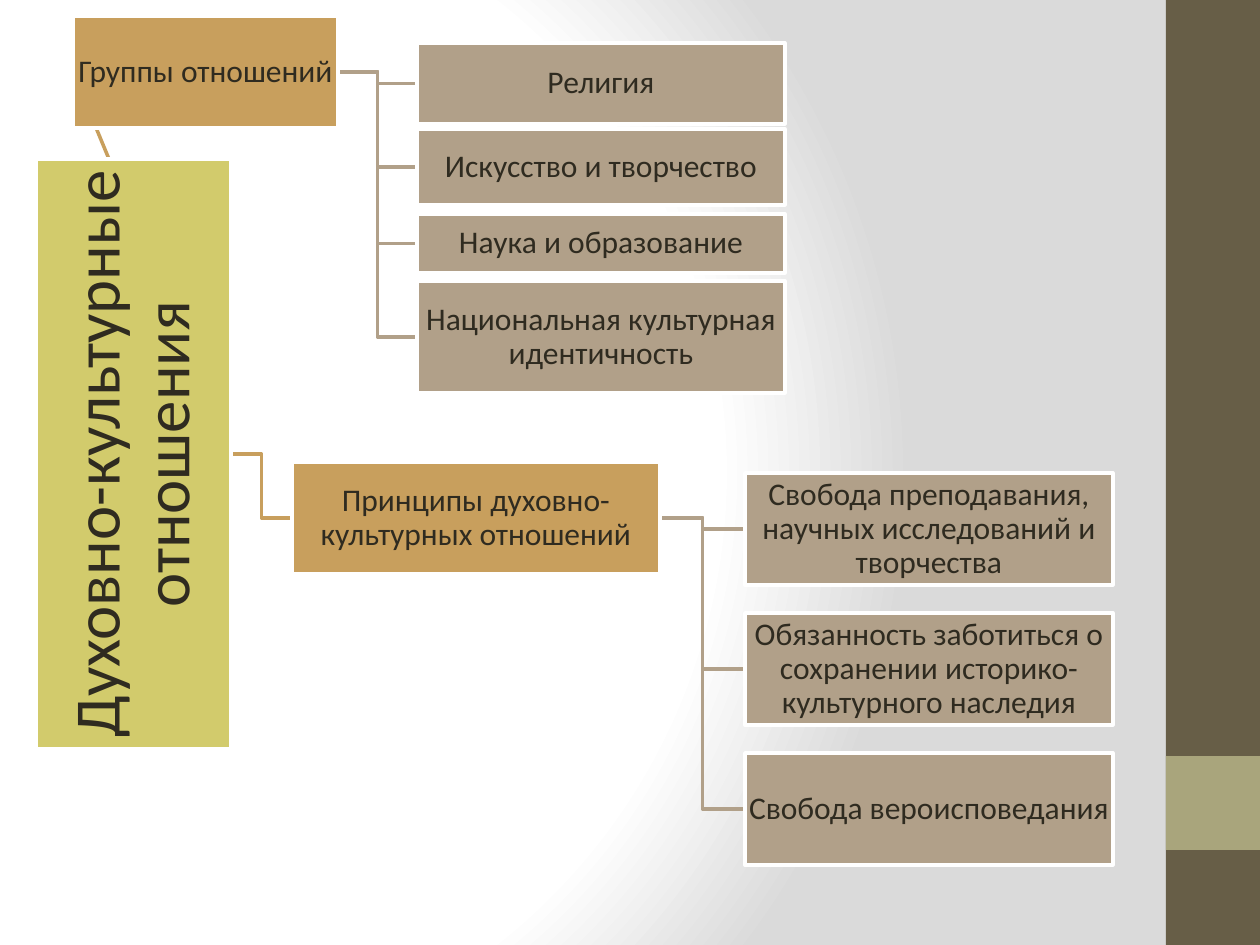
from lxml.etree import SubElement
from pptx import Presentation
from pptx.dml.color import RGBColor
from pptx.enum.shapes import MSO_CONNECTOR as CONN, MSO_SHAPE as SHAPE
from pptx.enum.text import MSO_ANCHOR as ANCHOR, PP_ALIGN as ALIGN
from pptx.oxml import parse_xml
from pptx.oxml.ns import nsdecls, qn
from pptx.util import Pt

PX = 914400 / 126
WHITE = RGBColor(0xFF, 0xFF, 0xFF)
INK = RGBColor(0x2F, 0x2B, 0x20)
OLIVE = RGBColor(0x67, 0x5E, 0x47)
SAGE = RGBColor(0xA9, 0xA5, 0x7C)
LIME = RGBColor(0xD2, 0xCB, 0x6C)
AMBER = RGBColor(0xC8, 0x9F, 0x5D)
TAUPE = RGBColor(0xB1, 0xA0, 0x89)
FONT = {"name": "Calibri", "bold": False}
FRAME = {"word_wrap": True, "vertical_anchor": ANCHOR.MIDDLE}
MARGINS = ("margin_left", "margin_top", "margin_right", "margin_bottom")

GROUPS = [
    ("Религия", 27, 81),
    ("Искусство и творчество", 113, 76),
    ("Наука и образование", 198, 59),
    ("Национальная культурная идентичность", 265, 112),
]
PRINCIPLES = [
    (text, 11 + 140 * i, 112)
    for i, text in enumerate([
        "Свобода преподавания, научных исследований и творчества",
        "Обязанность заботиться о сохранении историко-культурного наследия",
        "Свобода вероисповедания",
    ])
]


def px(n):
    """Turn pixels into whole EMU."""
    return round(n * PX)


def assign(obj, values):
    """Set each attribute named in a dict."""
    for name, value in values.items():
        setattr(obj, name, value)


def add_rect(s, box, color, border=None):
    """Add a flat rectangle, with a border if a colour is given."""
    sp = s.shapes.add_shape(SHAPE.RECTANGLE, *map(px, box))
    sp.shadow.inherit = False
    sp.fill.solid()
    sp.fill.fore_color.rgb = color
    if border is None:
        sp.line.fill.background()
    else:
        sp.line.color.rgb = border
        sp.line.width = Pt(2)
    return sp


def add_node(s, box, text, color, size=18, margin=1):
    """Add a bordered rectangle with centred text."""
    sp = add_rect(s, box, color, WHITE)
    tf = sp.text_frame
    assign(tf, {**FRAME, **dict.fromkeys(MARGINS, px(margin))})
    p = tf.paragraphs[0]
    assign(p, {"alignment": ALIGN.CENTER, "line_spacing": 0.9})
    after = SubElement(p._p.get_or_add_pPr(), qn("a:spcAft"))
    SubElement(after, qn("a:spcPct")).set("val", "35000")
    r = p.add_run()
    r.text = text
    assign(r.font, {**FONT, "size": Pt(size)})
    r.font.color.rgb = INK
    return sp


def add_elbow(s, start, end, color):
    """Draw a three-part line that turns halfway between two points."""
    (x1, y1), (x2, y2) = start, end
    mid = (x1 + x2) / 2
    fb = s.shapes.build_freeform(px(x1), px(y1))
    points = [(mid, y1), (mid, y2), (x2, y2)]
    fb.add_line_segments([(px(x), px(y)) for x, y in points], close=False)
    sp = fb.convert_to_shape()
    sp.shadow.inherit = False
    sp.fill.background()
    sp.line.color.rgb = color
    sp.line.width = Pt(2)


def add_branch(s, box, heading, children, child_x):
    """Add a heading in its box and the child boxes linked to its right."""
    x, y, w, h = box
    start = (x + w, y + h / 2)
    for _, dy, ch in reversed(children):
        add_elbow(s, start, (x + child_x, y + dy + ch / 2), TAUPE)
    head = add_node(s, box, heading, AMBER)
    for text, dy, ch in children:
        add_node(s, (x + child_x, y + dy, 368, ch), text, TAUPE)
    return head


def add_root(s, box):
    """Add the root, turned a quarter to fill the upright box."""
    x, y, w, h = box
    flat = (x + (w - h) / 2, y + (h - w) / 2, h, w)
    sp = add_node(s, flat, "Духовно-культурные отношения", LIME, 37, 4)
    sp.rotation = 270
    return sp


def add_root_link(root, head, s, start):
    """Join the right side of the root to a heading, behind both."""
    c = s.shapes.add_connector(CONN.STRAIGHT, 0, 0, 0, 0)
    c.begin_connect(root, 2)
    c.end_connect(head, 1)
    assign(c, {"begin_x": px(start[0]), "begin_y": px(start[1])})
    c.line.color.rgb = AMBER
    c.line.width = Pt(2)
    SubElement(c.element.spPr, qn("a:effectLst"))
    c.element.getparent().insert(2, c.element)


def add_backdrop(s, box):
    """Add the radial background and the side band within the slide box."""
    x, y, w, h = box
    stops = "".join(
        f'<a:gs pos="{pos}"><a:srgbClr val="{color}"/></a:gs>'
        for pos, color in [(0, "FFFFFF"), (75000, "FFFFFF"), (100000, "DADADA")]
    )
    bg = parse_xml(
        f'<p:bg {nsdecls("p", "a")}><p:bgPr><a:gradFill rotWithShape="1">'
        f'<a:gsLst>{stops}</a:gsLst><a:path path="circle">'
        '<a:fillToRect l="20000" t="50000" r="100000" b="50000"/></a:path>'
        '</a:gradFill><a:effectLst/></p:bgPr></p:bg>'
    )
    s.element.cSld.insert(0, bg)
    band = 94
    add_rect(s, (x + w - band, y, band, h), OLIVE)
    add_rect(s, (x + w - band, y + 756, band, band), SAGE)


def main():
    """Build and save the slide."""
    prs = Presentation()
    assign(prs, {"slide_width": px(1260), "slide_height": px(945)})
    s = prs.slides.add_slide(prs.slide_layouts[6])
    add_backdrop(s, (0, 0, 1260, 945))
    root_box = (36, 159, 195, 590)
    groups_box = (73, 16, 265, 112)
    principles_box = (292, 462, 368, 112)
    root_end = (231, 454)
    add_elbow(s, root_end, (292, 518), AMBER)
    root = add_root(s, root_box)
    groups = add_branch(s, groups_box, "Группы отношений", GROUPS, 344)
    add_branch(s, principles_box, "Принципы духовно-культурных отношений",
               PRINCIPLES, 453)
    add_root_link(root, groups, s, root_end)
    prs.save("out.pptx")


if __name__ == "__main__":
    main()
